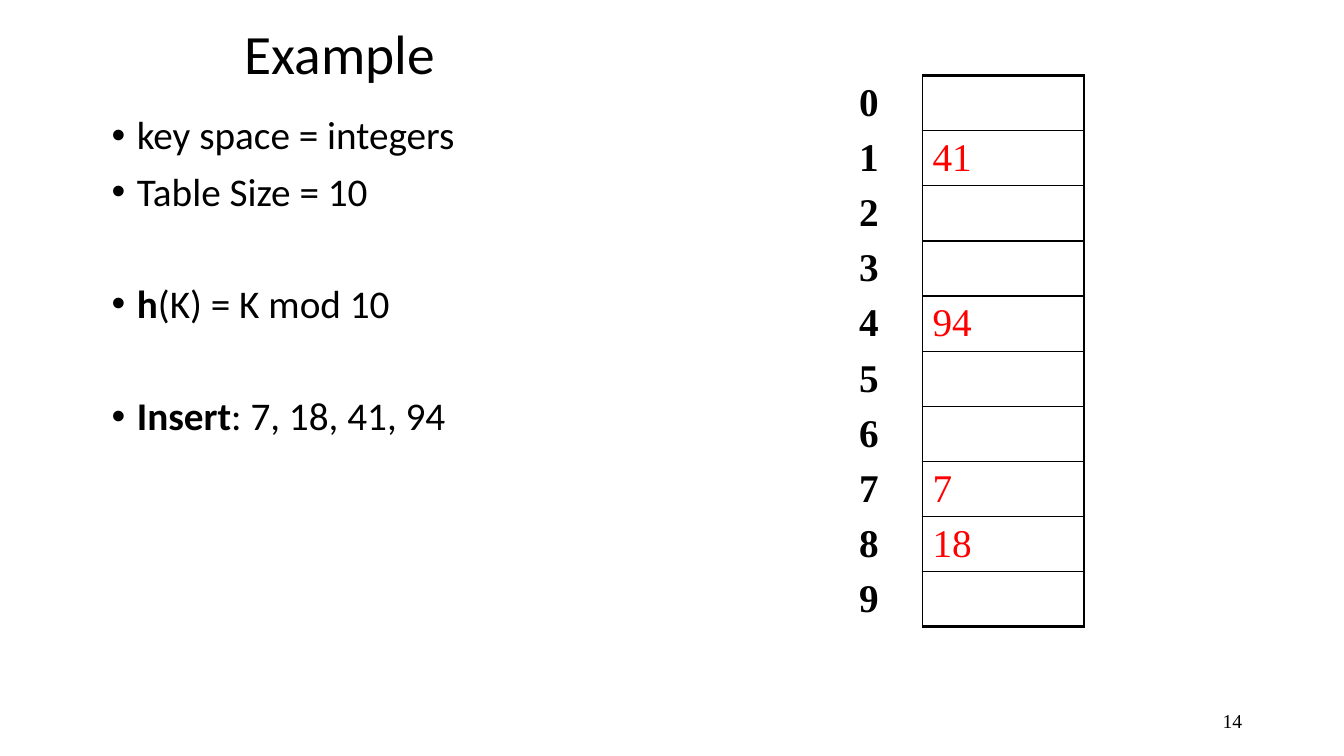
from pptx import Presentation
from pptx.dml.color import RGBColor
from pptx.enum.text import MSO_ANCHOR, PP_ALIGN
from pptx.oxml import parse_xml
from pptx.oxml.ns import nsdecls
from pptx.util import Inches, Pt

# Content
TITLE = "Example"
PAGE_NUMBER = "14"
# Each bullet: space before in points, then (text, bold) runs
BULLETS = [
    (10, [("key space = integers", False)]),
    (10, [("Table Size = 10", False)]),
    (50, [("h", True), ("(K) = K mod 10", False)]),
    (50, [("Insert", True), (": 7, 18, 41, 94", False)]),
]
TABLE_SIZE = 10
KEYS = [7, 18, 41, 94]

# Look
BLACK = RGBColor(0x00, 0x00, 0x00)
RED = RGBColor(0xFF, 0x00, 0x00)
SANS, SERIF = "Calibri", "Times New Roman"
THIN, THICK = 1, 2.25
NO_STYLE = "{2D5ABB26-0587-4C30-8999-92F81FD0307C}"
ROW_HEIGHT = 0.53
COLUMN_WIDTHS = [0.73, 1.6]


def add_run(p, text, size, font, color=BLACK, bold=False):
    r = p.add_run()
    r.text = text
    r.font.size = Pt(size)
    r.font.name = font
    r.font.bold = bold
    r.font.color.rgb = color


def add_text_frame(slide, left, top, width, height, anchor):
    tf = slide.shapes.add_textbox(
        Inches(left), Inches(top), Inches(width), Inches(height)).text_frame
    tf.word_wrap = True
    tf.vertical_anchor = anchor
    return tf


def add_bullet(p):
    pPr = p._p.get_or_add_pPr()
    pPr.set("marL", str(Inches(0.25)))
    pPr.set("indent", str(-Inches(0.25)))
    pPr.append(parse_xml(f'<a:buFont {nsdecls("a")} typeface="Arial"/>'))
    pPr.append(parse_xml(f'<a:buChar {nsdecls("a")} char="•"/>'))


def set_borders(cell, widths):
    """Draw the left, right, top and bottom lines; a width of 0 hides one."""
    tcPr = cell._tc.get_or_add_tcPr()
    for i, (side, width) in enumerate(zip("LRTB", widths)):
        fill = (f'<a:solidFill><a:srgbClr val="{BLACK}"/></a:solidFill>'
                if width else "<a:noFill/>")
        tcPr.insert(i, parse_xml(
            f'<a:ln{side} {nsdecls("a")} w="{Pt(width)}">{fill}</a:ln{side}>'))


def fill_cell(cell, text, color, bold, borders):
    cell.fill.background()
    cell.vertical_anchor = MSO_ANCHOR.MIDDLE
    cell.margin_top = cell.margin_bottom = Inches(0.04)
    set_borders(cell, borders)
    if text:
        add_run(cell.text_frame.paragraphs[0], text, 28, SERIF, color, bold)


prs = Presentation()
prs.slide_width, prs.slide_height = Inches(13.33), Inches(7.5)
s = prs.slides.add_slide(prs.slide_layouts[6])

# Page number
p = add_text_frame(s, 9.42, 6.95, 3, 0.4, MSO_ANCHOR.MIDDLE).paragraphs[0]
p.alignment = PP_ALIGN.RIGHT
add_run(p, PAGE_NUMBER, 14, SERIF)

# Title
p = add_text_frame(s, 2.33, 0.19, 8.5, 0.75, MSO_ANCHOR.MIDDLE).paragraphs[0]
p.line_spacing = 0.9
add_run(p, TITLE, 39.6, SANS)

# Bullets
tf = add_text_frame(s, 1.01, 1.1, 7.41, 4.96, MSO_ANCHOR.TOP)
for i, (space, runs) in enumerate(BULLETS):
    p = tf.add_paragraph() if i else tf.paragraphs[0]
    p.line_spacing = 0.9
    p.space_before = Pt(space)
    add_bullet(p)
    for text, bold in runs:
        add_run(p, text, 28, SANS, bold=bold)

# Hash table: each key sits in the slot numbered key mod table size
slots = {key % TABLE_SIZE: str(key) for key in KEYS}
table = s.shapes.add_table(
    TABLE_SIZE, 2, Inches(8.42), Inches(0.75),
    Inches(sum(COLUMN_WIDTHS)), Inches(ROW_HEIGHT * TABLE_SIZE)).table
table.first_row = table.horz_banding = False
table._tbl.tblPr.find("{*}tableStyleId").text = NO_STYLE
for column, width in zip(table.columns, COLUMN_WIDTHS):
    column.width = Inches(width)
for i, row in enumerate(table.rows):
    row.height = Inches(ROW_HEIGHT)
    top = THICK if i == 0 else THIN
    bottom = THICK if i == TABLE_SIZE - 1 else THIN
    index_cell, key_cell = row.cells
    fill_cell(index_cell, str(i), BLACK, True, (0, THIN, 0, 0))
    fill_cell(key_cell, slots.get(i), RED, False, (THIN, THICK, top, bottom))

prs.save("out.pptx")
